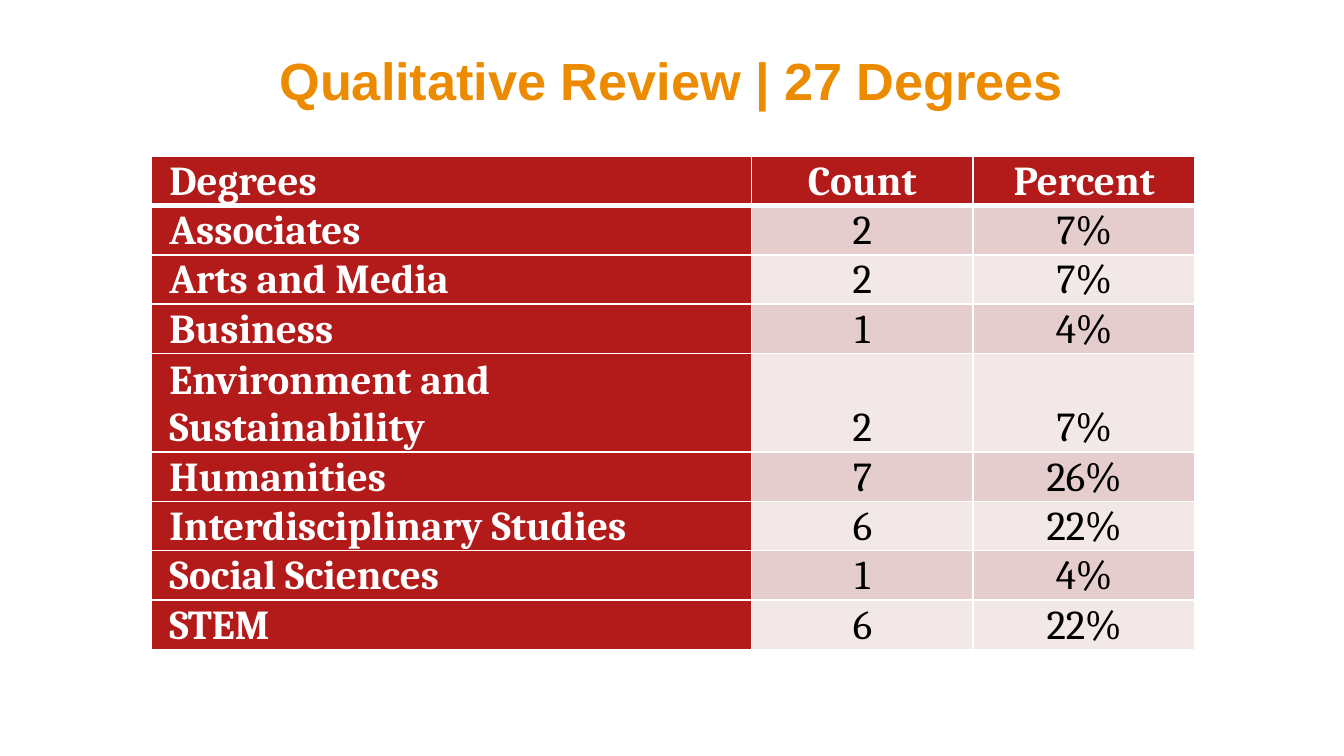
from lxml import etree
from pptx import Presentation
from pptx.dml.color import RGBColor
from pptx.enum.text import MSO_ANCHOR as ANCHOR, PP_ALIGN as ALIGN
from pptx.oxml.ns import qn
from pptx.util import Pt

WHITE = RGBColor(0xFF, 0xFF, 0xFF)
BLACK = RGBColor(0x00, 0x00, 0x00)
ORANGE = RGBColor(0xED, 0x8B, 0x00)
RED = RGBColor(0xB3, 0x1B, 0x1B)
PINK = RGBColor(0xE5, 0xCD, 0xCD)
PALE = RGBColor(0xF2, 0xE8, 0xE8)

DEGREES = [
    ("Degrees", "Count", "Percent"),
    ("Associates", "2", "7%"),
    ("Arts and Media", "2", "7%"),
    ("Business", "1", "4%"),
    ("Environment and Sustainability", "2", "7%"),
    ("Humanities", "7", "26%"),
    ("Interdisciplinary Studies", "6", "22%"),
    ("Social Sciences", "1", "4%"),
    ("STEM", "6", "22%"),
]


def style_paragraph(p, align, font_name, size, color, bold):
    """Set the alignment and font of a paragraph."""
    p.alignment = align
    font = p.font
    font.name, font.size, font.bold = font_name, Pt(size), bold
    font.color.rgb = color


def add_title(slide, text, left, top, width, height):
    """Place the centred slide title in the given box."""
    tf = slide.shapes.add_textbox(Pt(left), Pt(top), Pt(width), Pt(height)).text_frame
    tf.word_wrap = True
    tf.vertical_anchor = ANCHOR.MIDDLE
    p = tf.paragraphs[0]
    p.text = text
    style_paragraph(p, ALIGN.CENTER, "Arial", 28, ORANGE, True)


def set_borders(cell, widths):
    """Draw white cell borders, given widths for each side in points."""
    tc_pr = cell._tc.get_or_add_tcPr()
    for side, width in widths.items():
        ln = etree.SubElement(tc_pr, qn(f"a:ln{side}"), w=str(Pt(width)))
        fill = etree.SubElement(ln, qn("a:solidFill"))
        etree.SubElement(fill, qn("a:srgbClr"), val=str(WHITE))


def style_cell(cell, row, col):
    """Format a cell as heading or banded value by its position."""
    heading = row == 0 or col == 0
    set_borders(cell, {"L": 1, "R": 1, "T": 3 if row == 1 else 1, "B": 3 if row == 0 else 1})
    cell.fill.solid()
    cell.fill.fore_color.rgb = RED if heading else PINK if row % 2 else PALE
    cell.margin_left = cell.margin_right = Pt(10)
    cell.margin_top = cell.margin_bottom = Pt(0)
    cell.vertical_anchor = ANCHOR.BOTTOM
    align = ALIGN.CENTER if col else ALIGN.LEFT
    color = WHITE if heading else BLACK
    style_paragraph(cell.text_frame.paragraphs[0], align, "Cambria", 22, color, heading)


def add_degree_table(slide, rows, left, top, width, height):
    """Place the degree table in the given box."""
    box = Pt(left), Pt(top), Pt(width), Pt(height)
    table = slide.shapes.add_table(len(rows), len(rows[0]), *box).table
    value_width = 118.8
    for col, column in enumerate(table.columns):
        column.width = Pt(value_width if col else width - 2 * value_width)
    for row, values in enumerate(rows):
        table.rows[row].height = Pt(height / len(rows))
        for col, value in enumerate(values):
            cell = table.cell(row, col)
            cell.text = value
            style_cell(cell, row, col)


def main():
    """Build and save the slide."""
    prs = Presentation()
    prs.slide_width, prs.slide_height = Pt(720), Pt(405)
    slide = prs.slides.add_slide(prs.slide_layouts[6])
    add_title(slide, "Qualitative Review | 27 Degrees", 95, 22.3, 529.2, 40.3)
    add_degree_table(slide, DEGREES, 80.8, 83.7, 559.4, 226.8)
    prs.save("out.pptx")


if __name__ == "__main__":
    main()
